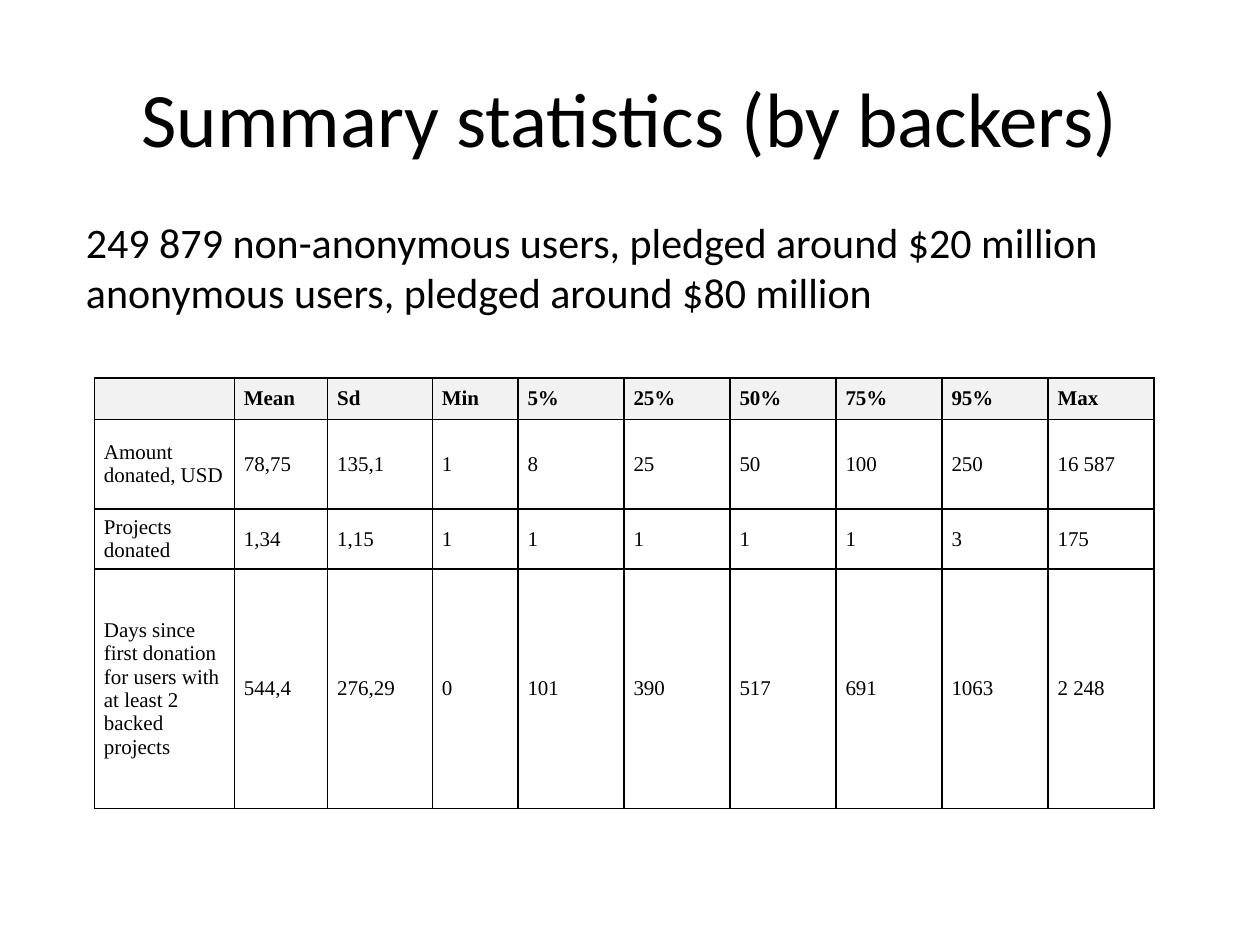
from lxml.etree import SubElement
from pptx import Presentation
from pptx.dml.color import RGBColor
from pptx.enum.text import MSO_ANCHOR, PP_ALIGN
from pptx.oxml.ns import qn
from pptx.util import Pt

BLACK, WHITE, HEADER_GREY = "000000", "FFFFFF", "F2F2F2"


def format_text(text_frame, font_name, size, alignment, bold=False):
    for paragraph in text_frame.paragraphs:
        paragraph.alignment = alignment
        for run in paragraph.runs:
            run.font.name = font_name
            run.font.size = Pt(size)
            run.font.bold = bold
            run.font.color.rgb = RGBColor.from_string(BLACK)


def fill_and_border(cell, fill_color, line_color, line_width):
    # Borders must come before the fill in the cell properties
    properties = cell._tc.get_or_add_tcPr()
    for side in ("a:lnL", "a:lnR", "a:lnT", "a:lnB"):
        line = SubElement(properties, qn(side), w=str(Pt(line_width)))
        fill = SubElement(line, qn("a:solidFill"))
        SubElement(fill, qn("a:srgbClr"), val=line_color)
    cell.fill.solid()
    cell.fill.fore_color.rgb = RGBColor.from_string(fill_color)


presentation = Presentation()
presentation.slide_width, presentation.slide_height = Pt(720), Pt(540)
slide = presentation.slides.add_slide(presentation.slide_layouts[5])

# Title
title = slide.shapes.title
title.left, title.top, title.width, title.height = Pt(36), Pt(21.6), Pt(648), Pt(90)
title.text_frame.text = "Summary statistics (by backers)"
title.text_frame.vertical_anchor = MSO_ANCHOR.MIDDLE
format_text(title.text_frame, "Calibri", 44, PP_ALIGN.CENTER)

# Statistics table
rows = [
    ["", "Mean", "Sd", "Min", "5%", "25%", "50%", "75%", "95%", "Max"],
    ["Amount donated, USD", "78,75", "135,1", "1", "8", "25", "50", "100", "250", "16 587"],
    ["Projects donated", "1,34", "1,15", "1", "1", "1", "1", "1", "3", "175"],
    ["Days since first donation\nfor users with at least 2\nbacked projects",
     "544,4", "276,29", "0", "101", "390", "517", "691", "1063", "2 248"],
]
column_widths = [80, 53.3, 59.8, 49] + [60.6] * 6
row_heights = [23.6, 51.2, 34.4, 136.8]
table = slide.shapes.add_table(
    len(rows), len(column_widths), Pt(54), Pt(216),
    Pt(sum(column_widths)), Pt(sum(row_heights))).table
for column, width in zip(table.columns, column_widths):
    column.width = Pt(width)
for row, height in zip(table.rows, row_heights):
    row.height = Pt(height)

for row_index, values in enumerate(rows):
    is_header = row_index == 0
    for column_index, value in enumerate(values):
        cell = table.cell(row_index, column_index)
        cell.text_frame.text = value
        cell.vertical_anchor = MSO_ANCHOR.MIDDLE
        cell.margin_left = cell.margin_right = Pt(5.4)
        cell.margin_top = cell.margin_bottom = Pt(0)
        alignment = PP_ALIGN.LEFT if column_index == 0 else PP_ALIGN.JUSTIFY
        format_text(cell.text_frame, "Times New Roman", 12, alignment, is_header)
        fill_and_border(cell, HEADER_GREY if is_header else WHITE, BLACK, 1)

# User totals
totals = slide.shapes.add_textbox(Pt(42), Pt(120), Pt(636), Pt(65.4))
totals.text_frame.word_wrap = True
totals.text_frame.text = (
    "249 879 non-anonymous users, pledged around $20 million\n"
    "anonymous users, pledged around $80 million")
format_text(totals.text_frame, "Calibri", 24, PP_ALIGN.LEFT)

presentation.save("out.pptx")
